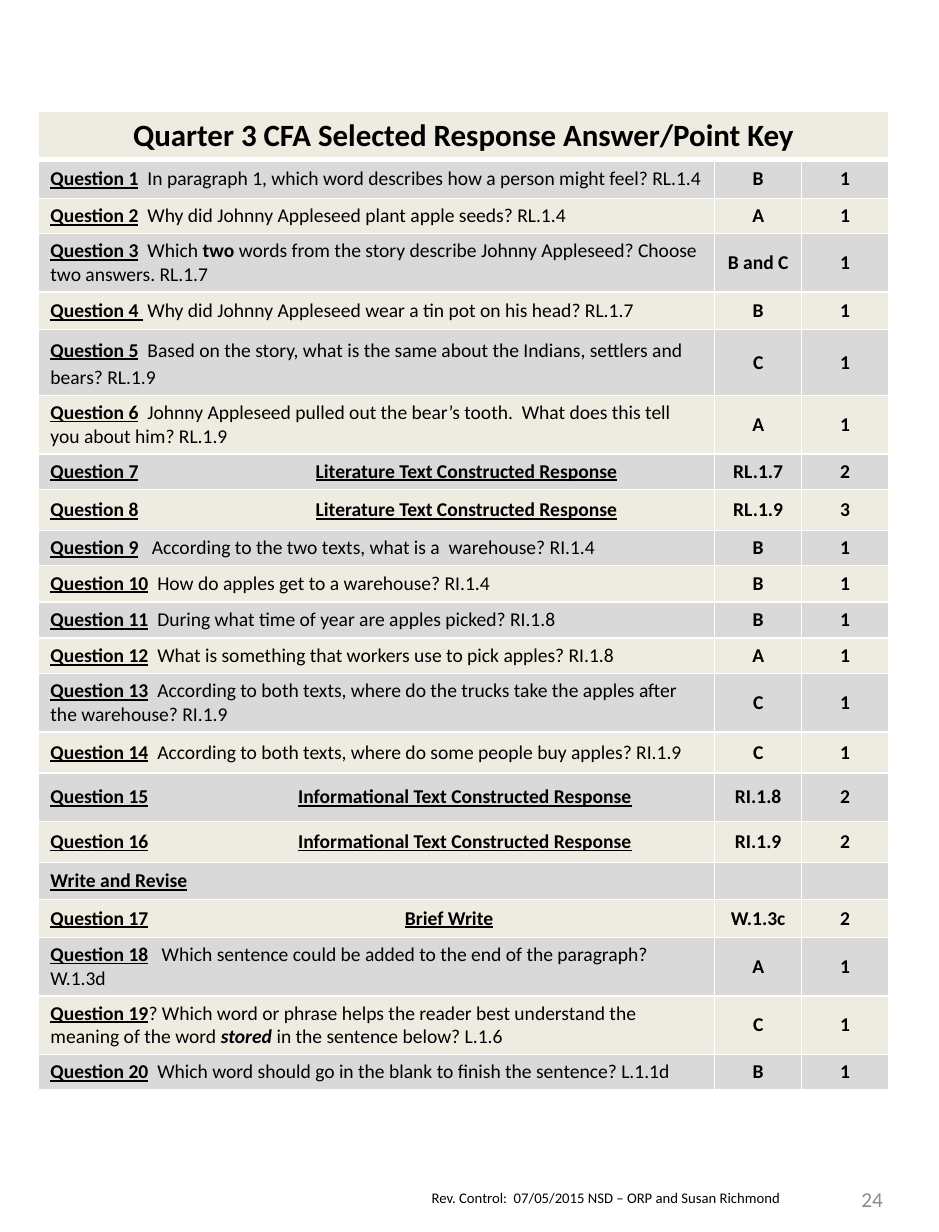
from lxml import etree
from pptx import Presentation
from pptx.dml.color import RGBColor
from pptx.enum.text import MSO_ANCHOR, PP_ALIGN
from pptx.oxml.ns import qn
from pptx.util import Inches, Pt

CENTER, RIGHT = PP_ALIGN.CENTER, PP_ALIGN.RIGHT
MIDDLE = MSO_ANCHOR.MIDDLE
FONT = "Calibri"
COLORS = {"ink": "000000", "number": "8C8C8C", "cream": "EEECE1", "gray": "D9D9D9", "rule": "FFFFFF"}

TITLE = "Quarter 3 CFA Selected Response Answer/Point Key"
TITLE_HEIGHT = 0.41
COLUMN_WIDTHS = [5.76, 0.74, 0.74]
LITERATURE = ("Literature Text Constructed Response", 2.26)
INFORMATIONAL = ("Informational Text Constructed Response", 2.11)
BRIEF_WRITE = ("Brief Write", 3.02)

# label, question parts as (text, style) or a tabbed heading, answer, points, row height
QUESTIONS = [
    ("Question 1", "  In paragraph 1, which word describes how a person might feel? RL.1.4", "B", "1", 0.33),
    ("Question 2", "  Why did Johnny Appleseed plant apple seeds? RL.1.4", "A", "1", 0.3),
    ("Question 3", [("  Which ", ""), ("two ", "b"),
                    ("words from the story describe Johnny Appleseed? Choose two answers. RL.1.7", "")],
     "B and C", "1", 0.5),
    ("Question 4 ", " Why did Johnny Appleseed wear a tin pot on his head? RL.1.7", "B", "1", 0.32),
    ("Question 5", "  Based on the story, what is the same about the Indians, settlers and bears? RL.1.9",
     "C", "1", 0.56),
    ("Question 6", "  Johnny Appleseed pulled out the bear’s tooth.  What does this tell you about him? RL.1.9",
     "A", "1", 0.5),
    ("Question 7", LITERATURE, "RL.1.7", "2", 0.3),
    ("Question 8", LITERATURE, "RL.1.9", "3", 0.35),
    ("Question 9", "   According to the two texts, what is a  warehouse? RI.1.4", "B", "1", 0.3),
    ("Question 10", "  How do apples get to a warehouse? RI.1.4", "B", "1", 0.31),
    ("Question 11", "  During what time of year are apples picked? RI.1.8", "B", "1", 0.31),
    ("Question 12", "  What is something that workers use to pick apples? RI.1.8", "A", "1", 0.3),
    ("Question 13", "  According to both texts, where do the trucks take the apples after the warehouse? RI.1.9",
     "C", "1", 0.5),
    ("Question 14", "  According to both texts, where do some people buy apples? RI.1.9", "C", "1", 0.35),
    ("Question 15", INFORMATIONAL, "RI.1.8", "2", 0.41),
    ("Question 16", INFORMATIONAL, "RI.1.9", "2", 0.35),
    ("Write and Revise", "", "", "", 0.32),
    ("Question 17", BRIEF_WRITE, "W.1.3c", "2", 0.32),
    ("Question 18", "   Which sentence could be added to the end of the paragraph? W.1.3d", "A", "1", 0.5),
    ("Question 19", [("? Which word or phrase helps the reader best understand the  meaning of the word ", ""),
                     ("stored ", "bi"), ("in the sentence below? L.1.6", "")], "C", "1", 0.5),
    ("Question 20", "  Which word should go in the blank to finish the sentence? L.1.1d", "B", "1", 0.3),
]
LINE_SPACING = {"Question 5": 1.15}


def add_run(paragraph, text, size, style="", color="ink"):
    run = paragraph.add_run()
    run.text = text
    font = run.font
    font.name, font.size = FONT, Pt(size)
    font.bold, font.italic, font.underline = "b" in style, "i" in style, "u" in style
    font.color.rgb = RGBColor.from_string(COLORS[color])


def add_tab_stop(paragraph, position):
    properties = paragraph._p.get_or_add_pPr()
    tabs = etree.SubElement(properties, qn("a:tabLst"))
    etree.SubElement(tabs, qn("a:tab"), pos=str(Inches(position)), algn="l")


def set_borders(cell, top, bottom):
    properties = cell._tc.get_or_add_tcPr()
    for index, (side, width) in enumerate(zip("LRTB", (1, 1, top, bottom))):
        line = etree.Element(qn(f"a:ln{side}"), w=str(Pt(width)))
        fill = etree.SubElement(line, qn("a:solidFill"))
        etree.SubElement(fill, qn("a:srgbClr"), val=COLORS["rule"])
        properties.insert(index, line)


def format_cell(cell, row):
    cell.vertical_anchor = MIDDLE
    cell.margin_top = cell.margin_bottom = Inches(0.04)
    cell.fill.solid()
    cell.fill.fore_color.rgb = RGBColor.from_string(COLORS["gray" if row % 2 else "cream"])
    set_borders(cell, 3 if row == 1 else 1, 3 if row == 0 else 1)


def write_question(paragraph, label, question):
    add_run(paragraph, label, 12, "bu")
    if isinstance(question, tuple):
        heading, position = question
        add_tab_stop(paragraph, position)
        add_run(paragraph, "\t", 12)
        add_run(paragraph, heading, 12, "bu")
    elif question:
        parts = [(question, "")] if isinstance(question, str) else question
        for text, style in parts:
            add_run(paragraph, text, 12, style)
    if label in LINE_SPACING:
        paragraph.line_spacing = LINE_SPACING[label]


def write_centered(paragraph, text, size):
    paragraph.alignment = CENTER
    if text:
        add_run(paragraph, text, size, "b")
    else:
        etree.SubElement(paragraph._p, qn("a:endParaRPr"), sz=str(size * 100))


def add_answer_key(slide, left, top):
    heights = [TITLE_HEIGHT] + [question[-1] for question in QUESTIONS]
    frame = slide.shapes.add_table(len(heights), len(COLUMN_WIDTHS), Inches(left), Inches(top),
                                   Inches(sum(COLUMN_WIDTHS)), Inches(sum(heights)))
    table = frame.table
    for column, width in zip(table.columns, COLUMN_WIDTHS):
        column.width = Inches(width)
    for index, height in enumerate(heights):
        table.rows[index].height = Inches(height)
        for cell in table.rows[index].cells:
            format_cell(cell, index)

    title_cell = table.cell(0, 0)
    title_cell.merge(table.cell(0, 2))
    write_centered(title_cell.text_frame.paragraphs[0], TITLE, 19)
    for row, (label, question, answer, points, height) in enumerate(QUESTIONS, 1):
        paragraphs = [cell.text_frame.paragraphs[0] for cell in table.rows[row].cells]
        write_question(paragraphs[0], label, question)
        write_centered(paragraphs[1], answer, 12)
        write_centered(paragraphs[2], points, 12)


def add_text(slide, box, text, size, color, alignment=None, anchor=None):
    shape = slide.shapes.add_textbox(*(Inches(value) for value in box))
    frame = shape.text_frame
    frame.word_wrap = True
    if anchor is not None:
        frame.vertical_anchor = anchor
    paragraph = frame.paragraphs[0]
    paragraph.alignment = alignment
    add_run(paragraph, text, size, color=color)


def add_footer(slide, left, top):
    add_text(slide, (left, top + 0.14, 4, 0.25),
             "Rev. Control:  07/05/2015 NSD – ORP and Susan Richmond", 9, "ink")
    add_text(slide, (left + 3.17, top, 0.87, 0.56), "24", 13, "number", RIGHT, MIDDLE)


def main():
    presentation = Presentation()
    presentation.slide_width, presentation.slide_height = Inches(8), Inches(10.5)
    slide = presentation.slides.add_slide(presentation.slide_layouts[6])
    add_footer(slide, 3.58, 9.94)
    add_answer_key(slide, 0.33, 0.95)
    presentation.save("out.pptx")


if __name__ == "__main__":
    main()
